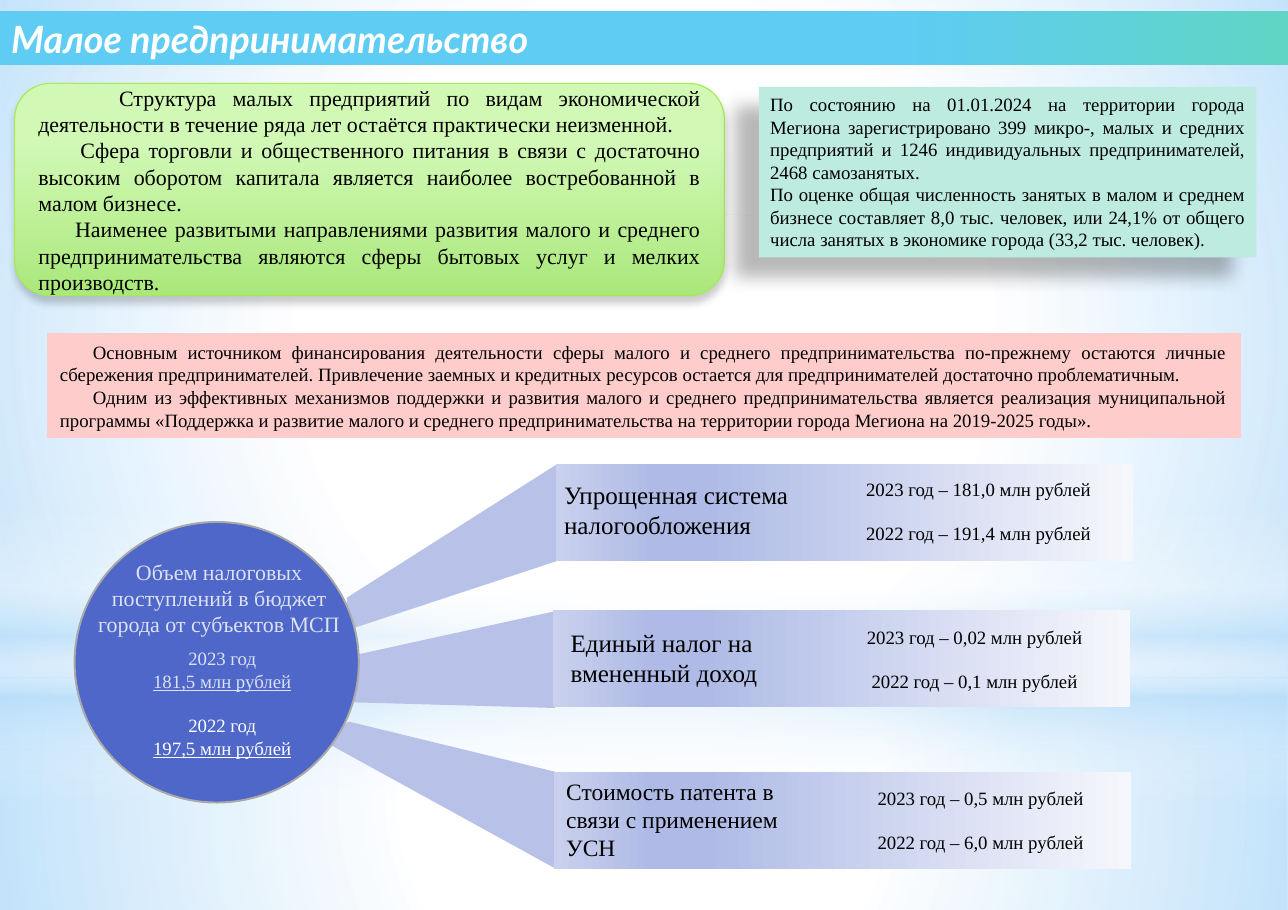
from lxml import etree
from pptx import Presentation
from pptx.dml.color import RGBColor
from pptx.enum import shapes, text
from pptx.oxml.ns import qn
from pptx.util import Cm, Pt

COLORS = {
    "white": "FFFFFF", "black": "000000", "sky": "B4DCFA", "wedge": "B8C2E9",
    "bar_pale": "F6F7FC", "bar_deep": "AFBBE6", "bar_soft": "CAD1EE",
    "circle": "4E67C8", "circle_edge": "A9A9A9", "circle_text": "DCE1F4",
    "lime_light": "D1F8B5", "lime": "AAE87B", "lime_edge": "A7EA52",
    "pink": "FFCCCC", "mint": "BEEBDF", "blue": "5ECCF3", "teal": "60D5C5",
}
SERIF = "Times New Roman"
WIDTH, HEIGHT = 29, 20.5
BAR_WIDTH, BAR_HEIGHT = 13, 2.18
BLANK_LINE = 13.8
PRESETS = shapes.MSO_SHAPE
ALIGN = text.PP_ALIGN
MIDDLE = text.MSO_ANCHOR.MIDDLE

BAR_STOPS = [(0, "bar_pale"), (74, "bar_deep"), (83, "bar_deep"), (100, "bar_soft")]

BACKDROP = [
    (PRESETS.RECTANGLE, (0, 15.27, WIDTH, 5.23),
     [(0, "white", 91), (37, "white", 76), (100, "sky", 79)], None),
    (PRESETS.RECTANGLE, (0, 0, WIDTH, 15.27),
     [(0, "white", 89), (48, "white", 62), (100, "sky", 79)], None),
    (PRESETS.RECTANGLE, (0, 11.25, WIDTH, 6.83),
     [(0, "white", 0), (29, "white", 30), (45, "sky", 40),
      (55, "white", 26), (65, "sky", 60), (100, "white", 0)], 90),
    (PRESETS.OVAL, (0, 4.78, WIDTH, 15.27), [(0, "white"), (56, "white", 0)], None),
]

TAXES = [
    {"wedge": [(7.82, 13.46), (12.57, 10.44), (12.6, 12.62), (7.75, 14.22)],
     "bar": (12.52, 10.46), "label": (12.45, 10.67, 11.99, 1.63), "size": 16,
     "name": ["Упрощенная система", "налогообложения"],
     "values": (18.44, 10.64, 7.19, 1.8),
     "years": ["2023 год – 181,0 млн рублей", "2022 год – 191,4 млн рублей"]},
    {"wedge": [(7.75, 14.81), (12.5, 13.77), (12.5, 15.95), (7.85, 15.82)],
     "bar": (12.45, 13.74), "label": (12.6, 14, 6.88, 1.63), "size": 16,
     "name": ["Единый налог на вмененный доход"],
     "values": (18.44, 13.97, 7.01, 1.8),
     "years": ["2023 год – 0,02 млн рублей", "2022 год – 0,1 млн рублей"]},
    {"wedge": [(7.87, 16.26), (12.55, 17.4), (12.53, 19.58), (7.04, 16.56)],
     "bar": (12.47, 17.4), "label": (12.5, 17.37, 5.94, 2.18), "size": 15,
     "name": ["Стоимость патента в связи с применением УСН"],
     "values": (18.64, 17.6, 6.88, 1.8),
     "years": ["2023 год – 0,5 млн рублей", "2022 год – 6,0 млн рублей"]},
]

STRUCTURE = [
    ("Структура малых предприятий по видам экономической деятельности в течение "
     "ряда лет остаётся практически неизменной.", 1.82),
    ("Сфера торговли и общественного питания в связи с достаточно высоким оборотом "
     "капитала является наиболее востребованной в малом бизнесе.", 0.95),
    ("Наименее развитыми направлениями развития малого и среднего предпринимательства "
     "являются сферы бытовых услуг и мелких производств.", 0.83),
]
FINANCING = [
    "Основным источником финансирования деятельности сферы малого и среднего "
    "предпринимательства по-прежнему остаются личные сбережения предпринимателей. "
    "Привлечение заемных и кредитных ресурсов остается для предпринимателей "
    "достаточно проблематичным.",
    "Одним из эффективных механизмов поддержки и развития малого и среднего "
    "предпринимательства является реализация муниципальной программы «Поддержка и "
    "развитие малого и среднего предпринимательства на территории города Мегиона "
    "на 2019-2025 годы».",
]
REGISTERED = [
    "По состоянию на 01.01.2024 на территории города Мегиона зарегистрировано 399 "
    "микро-, малых и средних предприятий и 1246 индивидуальных предпринимателей, "
    "2468 самозанятых.",
    "По оценке общая численность занятых в малом и среднем бизнесе составляет 8,0 "
    "тыс. человек, или 24,1% от общего числа занятых в экономике города (33,2 тыс. "
    "человек).",
]


def rgb(color):
    return RGBColor.from_string(COLORS[color])


def add_color(parent, color, opacity=100):
    node = etree.SubElement(parent, qn("a:srgbClr"), val=COLORS[color])
    if opacity < 100:
        etree.SubElement(node, qn("a:alpha"), val=str(opacity * 1000))


def set_gradient(shape, stops, angle):
    shape.fill.background()
    properties = shape._element.spPr
    gradient = etree.Element(qn("a:gradFill"), rotWithShape="1")
    stop_list = etree.SubElement(gradient, qn("a:gsLst"))
    for position, *color in stops:
        add_color(etree.SubElement(stop_list, qn("a:gs"), pos=str(position * 1000)), *color)
    if angle is None:
        radial = etree.SubElement(gradient, qn("a:path"), path="circle")
        etree.SubElement(radial, qn("a:fillToRect"), l="50000", t="50000", r="50000", b="50000")
    else:
        etree.SubElement(gradient, qn("a:lin"), ang=str(angle * 60000), scaled="0")
    properties.replace(properties.find(qn("a:noFill")), gradient)


def set_shadow(shape, opacity, blur, distance, angle):
    effects = shape._element.spPr.find(qn("a:effectLst"))
    shadow = etree.SubElement(effects, qn("a:outerShdw"), blurRad=str(Pt(blur)),
                              dist=str(Pt(distance)), dir=str(angle * 60000),
                              algn="ctr", rotWithShape="0")
    add_color(shadow, "black", opacity)


def paint(shape, fill, angle=None, edge=None, edge_width=0.75):
    shape.shadow.inherit = False
    if isinstance(fill, str):
        shape.fill.solid()
        shape.fill.fore_color.rgb = rgb(fill)
    else:
        set_gradient(shape, fill, angle)
    if edge:
        shape.line.color.rgb = rgb(edge)
        shape.line.width = Pt(edge_width)
    else:
        shape.line.fill.background()


def add_figure(slide, preset, place, fill, **style):
    figure = slide.shapes.add_shape(preset, *map(Cm, place))
    paint(figure, fill, **style)
    return figure


def add_wedge(slide, corners):
    start, *rest = [(Cm(x), Cm(y)) for x, y in corners]
    builder = slide.shapes.build_freeform(*start)
    builder.add_line_segments(rest, close=True)
    paint(builder.convert_to_shape(), "wedge")


def set_frame(shape, anchor=text.MSO_ANCHOR.TOP, side=0.25, edge=0.13):
    frame = shape.text_frame
    frame.word_wrap = True
    frame.vertical_anchor = anchor
    frame.margin_left = frame.margin_right = Cm(side)
    frame.margin_top = frame.margin_bottom = Cm(edge)
    return frame


def write(frame, words, size, color="black", align=ALIGN.LEFT, font=SERIF,
          indent=0, before=0, underline=False, strong=False):
    first = frame.paragraphs[0]
    paragraph = frame.add_paragraph() if first.runs else first
    paragraph.alignment = align
    if indent:
        paragraph._p.get_or_add_pPr().set("indent", str(Cm(indent)))
    if before:
        paragraph.space_before = Pt(before)
    run = paragraph.add_run()
    run.text = words
    run.font.name, run.font.size = font, Pt(size)
    run.font.color.rgb = rgb(color)
    run.font.underline = underline
    run.font.bold = run.font.italic = strong


def add_words(slide, place, **frame_style):
    return set_frame(slide.shapes.add_textbox(*map(Cm, place)), **frame_style)


def add_tax(slide, tax):
    add_wedge(slide, tax["wedge"])
    add_figure(slide, PRESETS.RECTANGLE, (*tax["bar"], BAR_WIDTH, BAR_HEIGHT),
               BAR_STOPS, angle=180)
    label = add_words(slide, tax["label"])
    for line in tax["name"]:
        write(label, line, tax["size"])
    values = add_words(slide, tax["values"])
    for index, year in enumerate(tax["years"]):
        write(values, year, 12, align=ALIGN.CENTER, before=index * BLANK_LINE)


def add_total(slide):
    add_figure(slide, PRESETS.OVAL, (1.68, 11.76, 6.4, 6.32), "circle",
               edge="circle_edge", edge_width=1.25)
    heading = add_words(slide, (1.9, 12.4, 6.07, 2.13), anchor=MIDDLE, side=0, edge=0)
    write(heading, "Объем налоговых поступлений в бюджет города от субъектов МСП",
          14, "circle_text", ALIGN.CENTER)
    totals = add_words(slide, (1.5, 14.45, 7.01, 2.82))
    for year, amount, color, before in [
            ("2023 год", "181,5 млн рублей", "circle_text", 0),
            ("2022 год", "197,5 млн рублей", "white", BLANK_LINE)]:
        write(totals, year, 12, color, ALIGN.CENTER, before=before)
        write(totals, amount, 12, color, ALIGN.CENTER, underline=True)


def add_panels(slide):
    structure = add_figure(slide, PRESETS.ROUNDED_RECTANGLE, (0.33, 1.88, 15.98, 4.78),
                           [(28, "lime_light"), (100, "lime")], angle=90, edge="lime_edge")
    set_shadow(structure, 20, 5, 4, 90)
    frame = set_frame(structure, MIDDLE, 0.3, 0.15)
    for words, indent in STRUCTURE:
        write(frame, words, 14, align=ALIGN.JUSTIFY, indent=indent)
    financing = add_figure(slide, PRESETS.RECTANGLE, (1.07, 7.52, 26.85, 2.34),
                           "pink", edge="pink")
    frame = set_frame(financing, MIDDLE, 0.28, 0.15)
    for words in FINANCING:
        write(frame, words, 12, align=ALIGN.JUSTIFY, indent=0.74)
    registered = add_figure(slide, PRESETS.RECTANGLE, (17.09, 1.96, 11.2, 3.84), "mint")
    set_shadow(registered, 28, 11.8, 19.7, 141)
    frame = set_frame(registered)
    for words in REGISTERED:
        write(frame, words, 12, align=ALIGN.JUSTIFY)


def add_title(slide):
    banner = add_figure(slide, PRESETS.RECTANGLE, (0, 0.25, WIDTH, 1.22),
                        [(70, "blue"), (100, "teal")], angle=0)
    write(set_frame(banner, MIDDLE), "Малое предпринимательство", 24, "white",
          font="Lato", strong=True)


def main():
    deck = Presentation()
    deck.slide_width, deck.slide_height = Cm(WIDTH), Cm(HEIGHT)
    slide = deck.slides.add_slide(deck.slide_layouts[6])
    for preset, place, stops, angle in BACKDROP:
        add_figure(slide, preset, place, stops, angle=angle)
    for tax in TAXES:
        add_tax(slide, tax)
    add_total(slide)
    add_panels(slide)
    add_title(slide)
    deck.save("out.pptx")


if __name__ == "__main__":
    main()
